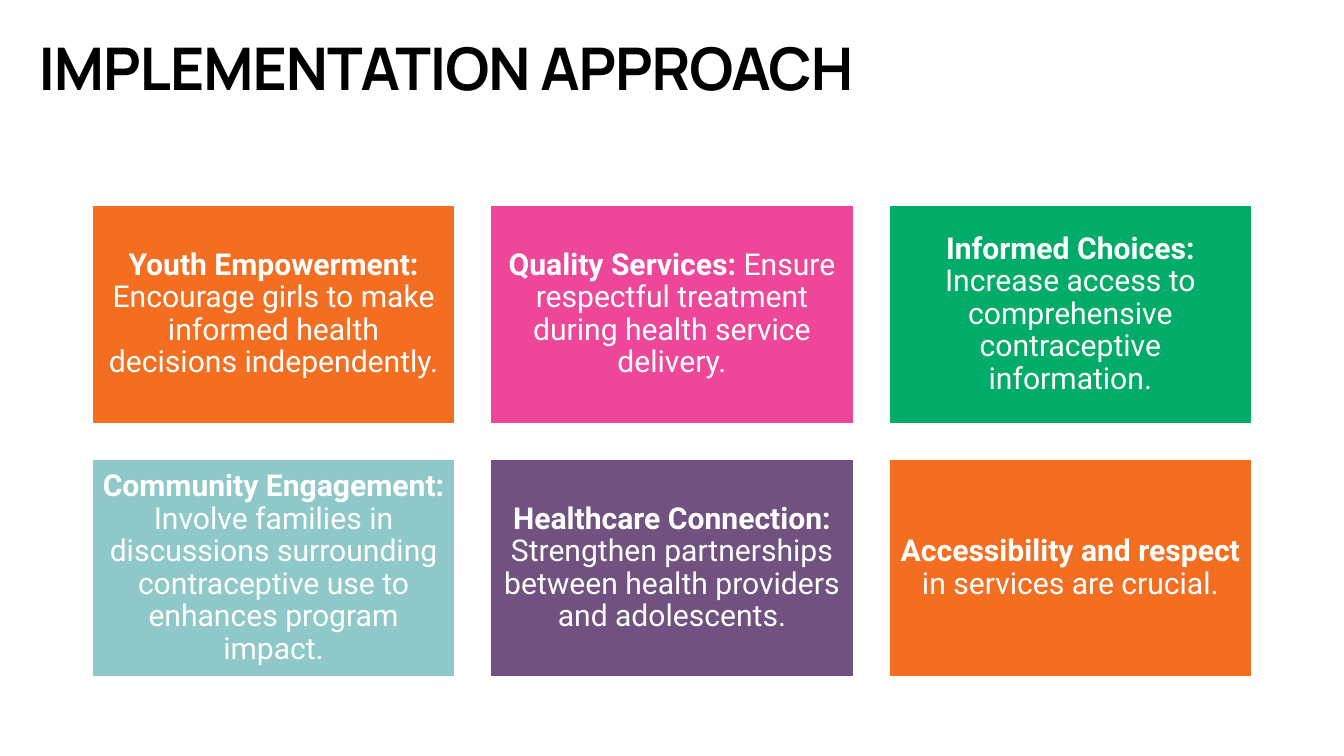
from pptx import Presentation
from pptx.dml.color import RGBColor
from pptx.enum.shapes import MSO_SHAPE
from pptx.enum.text import MSO_ANCHOR, PP_ALIGN
from pptx.util import Pt

RECTANGLE = MSO_SHAPE.RECTANGLE
MIDDLE, BOTTOM = MSO_ANCHOR.MIDDLE, MSO_ANCHOR.BOTTOM
CENTER, LEFT = PP_ALIGN.CENTER, PP_ALIGN.LEFT

# Content
TITLE = "IMPLEMENTATION APPROACH"
CARDS = [
    ("Youth Empowerment: ",
     "Encourage girls to make informed health decisions independently.", "orange"),
    ("Quality Services: ",
     "Ensure respectful treatment during health service delivery.", "pink"),
    ("Informed Choices: ",
     "Increase access to comprehensive contraceptive information.", "green"),
    ("Community Engagement: ",
     "Involve families in discussions surrounding contraceptive use to "
     "enhances program impact.", "teal"),
    ("Healthcare Connection: ",
     "Strengthen partnerships between health providers and adolescents.", "purple"),
    ("Accessibility and respect ", "in services are crucial.", "orange"),
]
COLORS = {
    "black": "000000", "white": "FFFFFF", "orange": "F36E20", "pink": "EE4799",
    "green": "00AC68", "teal": "8EC8C8", "purple": "70517F",
}

# Layout, in points
SLIDE_WIDTH, SLIDE_HEIGHT = 1920.24, 1080
TITLE_BOX = (48, 30, 1656, 116.6)
COLUMNS = 3
GRID_LEFT, GRID_TOP = 132, 294
CARD_WIDTH, CARD_HEIGHT = 517.5, 310.5
GAP = 51.75
CARD_INSET = 13


def color(name):
    return RGBColor.from_string(COLORS[name])


def set_insets(frame, left, top, right, bottom):
    frame.margin_left, frame.margin_top = Pt(left), Pt(top)
    frame.margin_right, frame.margin_bottom = Pt(right), Pt(bottom)


def write_paragraph(frame, spans, font_name, size, color_name, align, line_spacing):
    """Fill the first paragraph with (text, bold) spans."""
    paragraph = frame.paragraphs[0]
    paragraph.alignment = align
    paragraph.line_spacing = line_spacing
    paragraph.font.name = font_name
    paragraph.font.size = Pt(size)
    paragraph.font.color.rgb = color(color_name)
    for text, bold in spans:
        span = paragraph.add_run()
        span.text = text
        span.font.bold = bold
    return paragraph


def add_title(slide):
    box = slide.shapes.add_textbox(*map(Pt, TITLE_BOX))
    frame = box.text_frame
    frame.word_wrap = True
    frame.vertical_anchor = BOTTOM
    set_insets(frame, 7.2, 7.2, 7.2, 3.6)
    paragraph = write_paragraph(
        frame, [(TITLE, True)], "Manrope", 84, "black", LEFT, 0.7)
    # Letter spacing, in hundredths of a point
    paragraph.runs[0].font._element.set("spc", "-150")


def add_card(slide, index, heading, body, fill):
    row, column = divmod(index, COLUMNS)
    left = GRID_LEFT + column * (CARD_WIDTH + GAP)
    top = GRID_TOP + row * (CARD_HEIGHT + GAP)
    card = slide.shapes.add_shape(
        RECTANGLE, Pt(left), Pt(top), Pt(CARD_WIDTH), Pt(CARD_HEIGHT))
    card.shadow.inherit = False
    card.fill.solid()
    card.fill.fore_color.rgb = color(fill)
    card.line.color.rgb = color("white")
    card.line.width = Pt(1)
    frame = card.text_frame
    frame.word_wrap = True
    frame.vertical_anchor = MIDDLE
    set_insets(frame, *[CARD_INSET] * 4)
    write_paragraph(
        frame, [(heading, True), (body, False)], "Roboto", 43, "white", CENTER, 0.9)


def main():
    deck = Presentation()
    deck.slide_width, deck.slide_height = Pt(SLIDE_WIDTH), Pt(SLIDE_HEIGHT)
    slide = deck.slides.add_slide(deck.slide_layouts[6])
    add_title(slide)
    for index, (heading, body, fill) in enumerate(CARDS):
        add_card(slide, index, heading, body, fill)
    deck.save("out.pptx")


if __name__ == "__main__":
    main()
